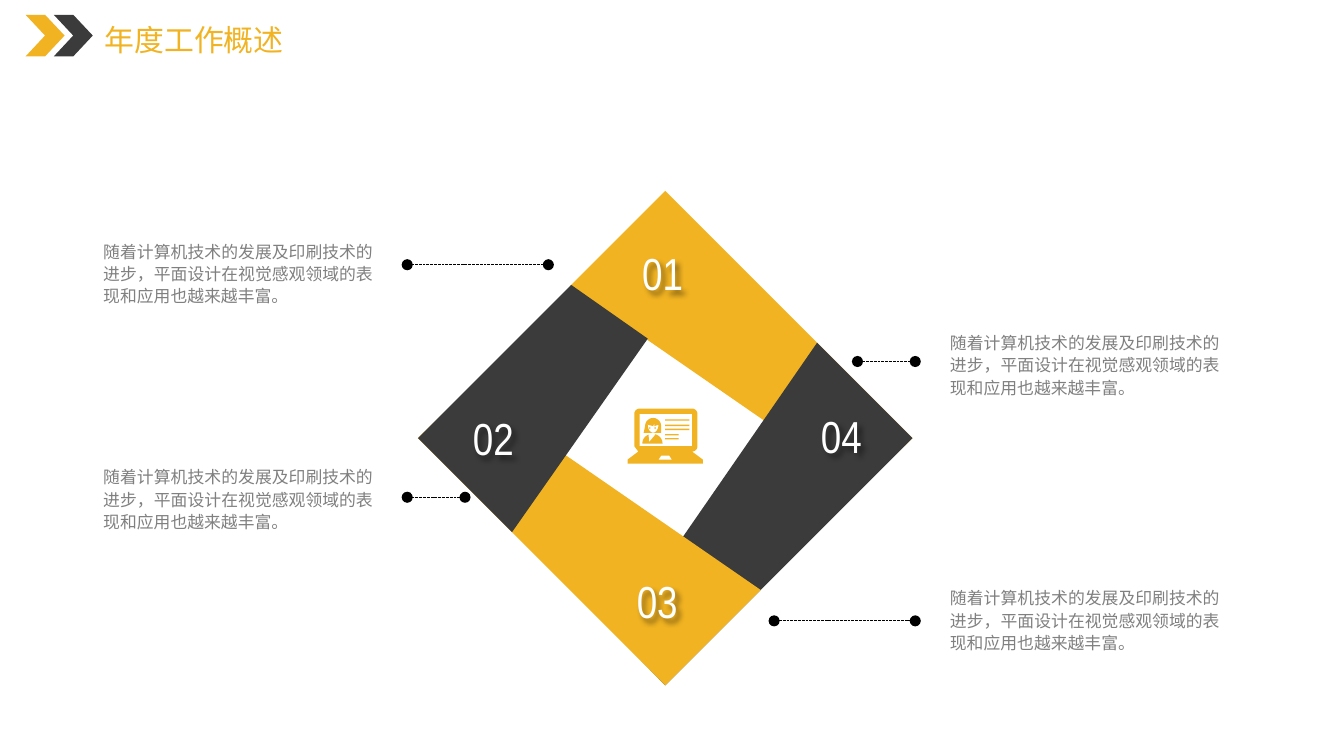
from math import cos, radians, sin

from lxml.etree import SubElement
from pptx import Presentation
from pptx.dml.color import RGBColor
from pptx.enum.dml import MSO_LINE_DASH_STYLE as Dash
from pptx.enum.shapes import MSO_CONNECTOR as Connector, MSO_SHAPE as Preset
from pptx.enum.text import MSO_ANCHOR as Anchor, MSO_AUTO_SIZE as AutoSize, PP_ALIGN as Align
from pptx.oxml import parse_xml
from pptx.oxml.ns import nsdecls, qn
from pptx.util import Inches, Pt

GOLD, DARK, GRAY, WHITE, BLACK = "F1B322", "3B3B3B", "808080", "FFFFFF", "000000"
CJK, NARROW = "Noto Sans CJK SC", "Arial Narrow"
BODY = "随着计算机技术的发展及印刷技术的进步，平面设计在视觉感观领域的表现和应用也越来越丰富。"


def color(value):
    """Turn a hex string into a colour."""
    return RGBColor.from_string(value)


def paint(shape, fill):
    """Give a shape a plain fill without line or shadow."""
    shape.shadow.inherit = False
    shape.fill.solid()
    shape.fill.fore_color.rgb = color(fill)
    shape.line.fill.background()


def place(shape, box):
    """Move a shape to a box of left, top, width and height in inches."""
    shape.left, shape.top, shape.width, shape.height = map(Inches, box)


def write(shape, text, size, font, fill, align=Align.LEFT, wrap=False):
    """Write one formatted paragraph and return it."""
    frame = shape.text_frame
    frame.text = text
    frame.word_wrap = wrap
    frame.auto_size = AutoSize.NONE
    frame.vertical_anchor = Anchor.TOP
    para = frame.paragraphs[0]
    para.alignment = align
    span = para.runs[0]
    span.font.size = Pt(size)
    span.font.color.rgb = color(fill)
    span.font.name = font
    SubElement(span.font._element, qn("a:ea")).set("typeface", font)
    return para


def add_outline(page, contours, fill, origin):
    """Draw closed contours, given in inches from an origin, as one shape."""
    def spot(point):
        return Inches(origin[0] + point[0]), Inches(origin[1] + point[1])

    first, *others = contours
    builder = page.shapes.build_freeform(*spot(first[0]))
    builder.add_line_segments([spot(point) for point in first[1:]], close=True)
    for contour in others:
        builder.move_to(*spot(contour[0]))
        builder.add_line_segments([spot(point) for point in contour[1:]], close=True)
    paint(builder.convert_to_shape(), fill)


def rectangle(left, top, right, bottom):
    """Return the corners of a rectangle."""
    return [(left, top), (right, top), (right, bottom), (left, bottom)]


def arc(x, y, radius_x, radius_y, start, end):
    """Return points along an elliptical arc, with angles in degrees."""
    steps = 12
    angles = [radians(start + (end - start) * i / steps) for i in range(steps + 1)]
    return [(x + radius_x * cos(angle), y + radius_y * sin(angle)) for angle in angles]


def add_header(page, title, box):
    """Place the two chevrons and the title in the header box."""
    left, top, width, height = box
    for offset, fill in ((0, GOLD), (0.21, DARK)):
        chevron = page.shapes.add_shape(
            Preset.CHEVRON, Inches(left + offset), Inches(top), Inches(0.29), Inches(height))
        paint(chevron, fill)
    heading = page.shapes.title
    place(heading, (left + 0.51, top + 0.01, width - 0.51, 0.35))
    write(heading, title, 16, CJK, GOLD)
    frame = heading.text_frame
    frame.margin_left = frame.margin_right = Inches(0.08)
    frame.margin_top = frame.margin_bottom = Inches(0.04)


def add_laptop(page, origin):
    """Draw the laptop showing a profile, from its top left corner."""
    lid = [*arc(0.09, 0.04, 0.04, 0.04, 180, 270), *arc(0.48, 0.04, 0.04, 0.04, 270, 360),
           *arc(0.48, 0.28, 0.04, 0.04, 0, 90)]
    base = [(0.56, 0.38), (0.56, 0.41), (0, 0.41), (0, 0.38), (0.08, 0.32), (0.05, 0.28)]
    notch = [(0.25, 0.35), (0.31, 0.35), (0.33, 0.38), (0.23, 0.38)]
    bars = [rectangle(0.28, top, right, top + 0.01) for top, right in
            ((0.08, 0.46), (0.12, 0.46), (0.15, 0.46), (0.19, 0.38), (0.22, 0.38))]
    hair = [(0.12, 0.18), *arc(0.19, 0.13, 0.06, 0.06, 180, 360), (0.25, 0.18)]
    face = [*arc(0.19, 0.12, 0.04, 0.06, 0, 180), (0.19, 0.13), (0.19, 0.1),
            (0.19, 0.13), (0.2, 0.11), (0.2, 0.13)]
    eyes = [rectangle(x, 0.14, x + 0.01, 0.15) for x in (0.16, 0.2)]
    bust = [*arc(0.18, 0.26, 0.07, 0.07, 180, 250), (0.16, 0.25), (0.21, 0.19),
            *arc(0.19, 0.26, 0.07, 0.07, 290, 360)]
    screen = rectangle(0.09, 0.04, 0.48, 0.28)
    add_outline(page, [lid + base, notch, screen, *bars, hair, face, *eyes, bust], GOLD, origin)


def add_diamond(page, box):
    """Draw four interlocking pieces, each a quarter turn on from the last."""
    left, top, width, height = box
    center = left + width / 2, top + height / 2
    piece = [(0, -1.84), (1.84, 0), (1.46, 0.37), (-0.71, -1.13)]
    for fill in (GOLD, DARK, GOLD):
        add_outline(page, [piece], fill, center)
        piece = [(-y, x) for x, y in piece]
    tucked = [(-0.13, -0.74), (-1.14, 0.7), (-1.84, 0), (-0.7, -1.14)]
    add_outline(page, [tucked], DARK, center)


def add_number(page, text, box):
    """Place a white number with a soft shadow."""
    label = page.shapes.add_textbox(*map(Inches, box))
    write(label, text, 24, NARROW, WHITE)
    label._element.spPr.append(parse_xml(
        f'<a:effectLst {nsdecls("a")}><a:outerShdw blurRad="38100" dist="38100" dir="2700000" '
        'algn="tl"><a:srgbClr val="000000"><a:alpha val="43000"/></a:srgbClr>'
        '</a:outerShdw></a:effectLst>'))


def add_leader(page, start, end, y):
    """Draw a dashed line with a dot at both ends."""
    leader = page.shapes.add_connector(
        Connector.STRAIGHT, Inches(start), Inches(y), Inches(end), Inches(y))
    leader.line.color.rgb = color(BLACK)
    leader.line.width = Pt(0.5)
    leader.line.dash_style = Dash.SQUARE_DOT
    stroke = leader.line._get_or_add_ln()
    for tag in ("a:headEnd", "a:tailEnd"):
        SubElement(stroke, qn(tag)).set("type", "oval")
    SubElement(leader._element.spPr, qn("a:effectLst"))


def add_note(page, box):
    """Place one justified description."""
    note = page.shapes.add_textbox(*map(Inches, box))
    para = write(note, BODY, 9, CJK, GRAY, Align.JUSTIFY, True)
    para.line_spacing = Pt(12)


def main():
    """Build and save the slide."""
    deck = Presentation()
    deck.slide_width, deck.slide_height = Inches(10), Inches(10 * 9 / 16)
    page = deck.slides.add_slide(deck.slide_layouts[5])
    add_header(page, "年度工作概述", (0.19, 0.11, 2.01, 0.31))
    add_laptop(page, (4.67, 3.04))
    add_diamond(page, (3.11, 1.42, 3.68, 3.68))
    left_side, right_side = (0.67, 3.03), (6.97, 6.81)
    items = (
        ("01", (4.68, 1.78, 0.51, 0.51), left_side, 1.73, 4.08, 1.97),
        ("02", (3.42, 3.01, 0.55, 0.51), left_side, 3.41, 3.46, 3.7),
        ("03", (4.64, 4.22, 0.56, 0.51), right_side, 4.31, 5.76, 4.62),
        ("04", (6.01, 2.99, 0.55, 0.51), right_side, 2.41, 6.38, 2.69),
    )
    for number, box, (note_left, outer_end), note_top, inner_end, leader_y in items:
        add_number(page, number, box)
        add_leader(page, inner_end, outer_end, leader_y)
        add_note(page, (note_left, note_top, 2.2, 0.61))
    deck.save("out.pptx")


if __name__ == "__main__":
    main()
